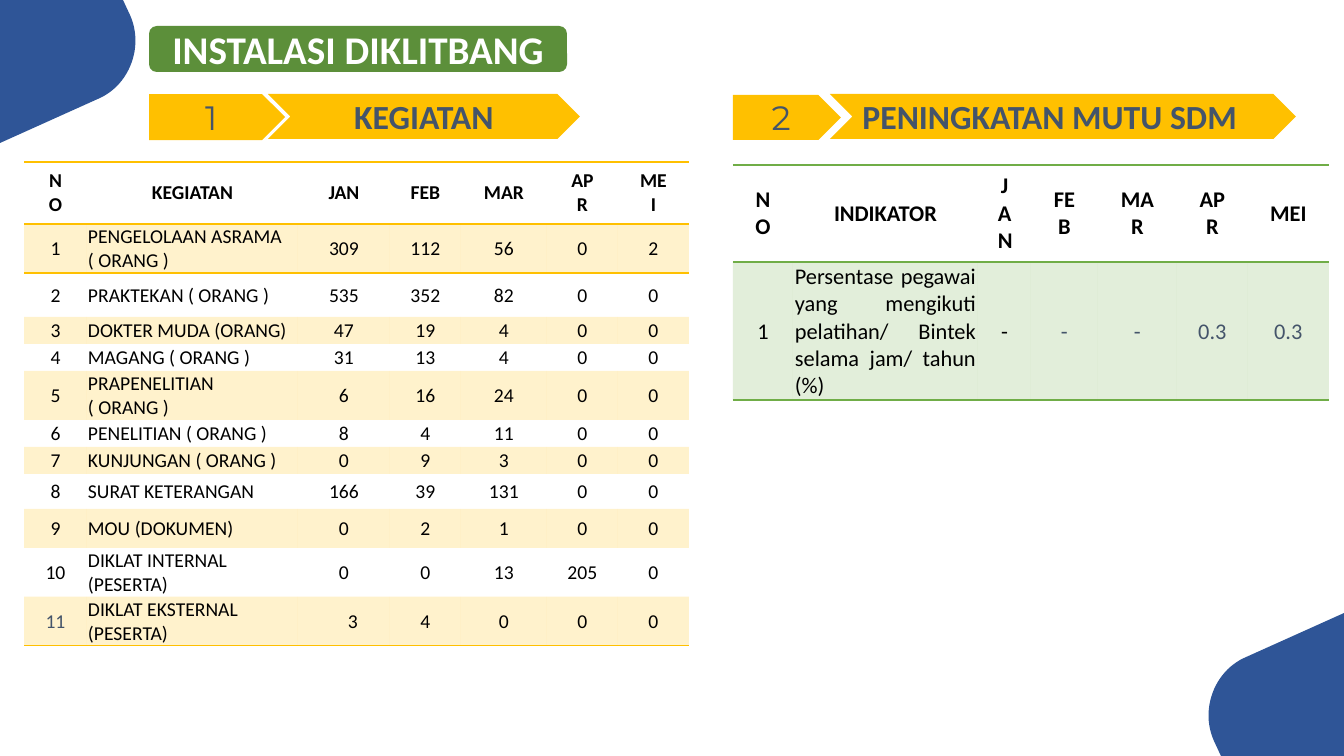
from lxml import etree
from pptx import Presentation
from pptx.dml.color import RGBColor
from pptx.enum.shapes import MSO_SHAPE
from pptx.enum.text import MSO_ANCHOR, MSO_AUTO_SIZE, PP_ALIGN
from pptx.oxml.ns import qn
from pptx.util import Pt

CENTER, LEFT, JUSTIFY = PP_ALIGN.CENTER, PP_ALIGN.LEFT, PP_ALIGN.JUSTIFY
MIDDLE = MSO_ANCHOR.MIDDLE
PENTAGON, CHEVRON = MSO_SHAPE.PENTAGON, MSO_SHAPE.CHEVRON
ROUNDED = MSO_SHAPE.ROUNDED_RECTANGLE

WIDTH, HEIGHT = 1344, 756
SCALE = 914400 / 100.8
BLUE, GREEN, GOLD, LEAF = "2F5597", "5C8F3A", "FFC000", "70AD47"
SLATE, BLACK, WHITE = "44546A", "000000", "FFFFFF"
PLAIN_STYLE = "{2D5ABB26-0587-4C30-8999-92F81FD0307C}"

TITLE = "INSTALASI DIKLITBANG"
TITLE_BOX = (149, 26, 418, 46)

# shape, box, text, font, bold, alignment
BANNERS = [
    (PENTAGON, (149, 94, 136, 46), "1", "Montserrat", False, CENTER),
    (CHEVRON, (268, 94, 312, 45), "KEGIATAN", "Calibri", True, CENTER),
    (PENTAGON, (733, 95, 108, 45), "2", "Montserrat", False, CENTER),
    (CHEVRON, (830, 94, 466, 45), "PENINGKATAN MUTU SDM", "Calibri", True, LEFT),
]

ACTIVITIES = {
    "at": (24, 162), "size": 14, "accent": GOLD, "label_align": LEFT, "inset": 1,
    "columns": [63, 211, 92, 71, 86, 71, 71],
    "heights": [62, 49, 44, 27, 27, 49, 27, 27, 35, 39, 49, 49],
    "slate_cells": {(11, 0)},
    "left_insets": {(11, 2): 19},
    "rows": [
        ("NO", "KEGIATAN", "JAN", "FEB", "MAR", "APR", "MEI"),
        (1, "PENGELOLAAN ASRAMA ( ORANG )", 309, 112, 56, 0, 2),
        (2, "PRAKTEKAN ( ORANG )", 535, 352, 82, 0, 0),
        (3, "DOKTER MUDA (ORANG)", 47, 19, 4, 0, 0),
        (4, "MAGANG ( ORANG )", 31, 13, 4, 0, 0),
        (5, "PRAPENELITIAN ( ORANG )", 6, 16, 24, 0, 0),
        (6, "PENELITIAN ( ORANG )", 8, 4, 11, 0, 0),
        (7, "KUNJUNGAN ( ORANG )", 0, 9, 3, 0, 0),
        (8, "SURAT KETERANGAN", 166, 39, 131, 0, 0),
        (9, "MOU (DOKUMEN)", 0, 2, 1, 0, 0),
        (10, "DIKLAT INTERNAL (PESERTA)", 0, 0, 13, 205, 0),
        (11, "DIKLAT EKSTERNAL (PESERTA)", 3, 4, 0, 0, 0),
    ],
}
STAFF_QUALITY = {
    "at": (733, 165), "size": 16, "accent": LEAF, "label_align": JUSTIFY, "inset": 2,
    "columns": [60, 185, 53, 67, 79, 71, 81],
    "heights": [97, 138],
    "slate_cells": {(1, column) for column in range(3, 7)},
    "left_insets": {},
    "rows": [
        ("NO", "INDIKATOR", "JAN", "FEB", "MAR", "APR", "MEI"),
        (1, "Persentase pegawai yang mengikuti pelatihan/ Bintek selama jam/ tahun (%)",
         "-", "-", "-", 0.3, 0.3),
    ],
}

CORNER_START = [(0, 0), (123, 0)]
CORNER_CURVE = [(130, 15), (144, 46), (130, 84), (100, 98)]
CORNER_END = [(0, 143)]


def px(length):
    return round(length * SCALE)


def color(value):
    return RGBColor.from_string(value)


def paint(shape, value):
    shape.shadow.inherit = False
    shape.fill.solid()
    shape.fill.fore_color.rgb = color(value)
    shape.line.fill.background()


def write(frame, text, align, font_color, **font_format):
    para = frame.paragraphs[0]
    para.alignment = align
    span = para.add_run()
    span.text = str(text)
    span.font.color.rgb = color(font_color)
    for name, value in font_format.items():
        setattr(span.font, name, value)


def curve_points(controls, steps=24):
    """Points along a cubic Bezier curve."""
    points = []
    for step in range(steps + 1):
        t = step / steps
        weights = ((1 - t) ** 3, 3 * t * (1 - t) ** 2, 3 * t * t * (1 - t), t ** 3)
        points.append(tuple(sum(w * point[axis] for w, point in zip(weights, controls))
                            for axis in (0, 1)))
    return points


def add_corner(page, points):
    first, *others = [(px(x), px(y)) for x, y in points]
    builder = page.shapes.build_freeform(*first)
    builder.add_line_segments(others, close=True)
    paint(builder.convert_to_shape(), BLUE)


def add_title(page):
    plate = page.shapes.add_shape(ROUNDED, *map(px, TITLE_BOX))
    paint(plate, GREEN)
    title = page.shapes.title
    title.element.addprevious(plate.element)
    for name, length in zip(("left", "top", "width", "height"), TITLE_BOX):
        setattr(title, name, px(length))
    frame = title.text_frame
    frame.auto_size = MSO_AUTO_SIZE.NONE
    frame.vertical_anchor = MIDDLE
    write(frame, TITLE, CENTER, WHITE, size=Pt(28), name="Calibri", bold=True)


def add_banner(page, kind, box, text, font, bold, align):
    banner = page.shapes.add_shape(kind, *map(px, box))
    paint(banner, GOLD)
    banner.text_frame.vertical_anchor = MIDDLE
    write(banner.text_frame, text, align, SLATE, size=Pt(24.1), name=font, bold=bold)


def tint(cell, value):
    """Fill a cell with the colour at 20% opacity."""
    cell.fill.solid()
    cell.fill.fore_color.rgb = color(value)
    properties = cell._tc.get_or_add_tcPr()
    shade = properties.find(qn("a:solidFill")).find(qn("a:srgbClr"))
    etree.SubElement(shade, qn("a:alpha"), val="20000")


def add_border(cell, side, value):
    border = etree.Element(qn("a:" + side), w=str(Pt(1)))
    fill = etree.SubElement(border, qn("a:solidFill"))
    etree.SubElement(fill, qn("a:srgbClr"), val=value)
    cell._tc.get_or_add_tcPr().insert(0, border)


def add_data_table(page, data):
    rows, columns, heights = data["rows"], data["columns"], data["heights"]
    box = (*data["at"], sum(columns), sum(heights))
    holder = page.shapes.add_table(len(rows), len(columns), *map(px, box))
    holder.element.find(".//" + qn("a:tableStyleId")).text = PLAIN_STYLE
    table = holder.table
    table.first_row = table.horz_banding = False
    for column, width in zip(table.columns, columns):
        column.width = px(width)
    for row, height in zip(table.rows, heights):
        row.height = px(height)

    for r, values in enumerate(rows):
        header = r == 0
        for c, value in enumerate(values):
            cell = table.cell(r, c)
            side = 20 if header else 2 if c == 0 else data["inset"]
            insets = {"left": data["left_insets"].get((r, c), side), "right": side,
                      "top": 7 if header else 1, "bottom": 7 if header else 0}
            for name, length in insets.items():
                setattr(cell, "margin_" + name, px(length))
            cell.vertical_anchor = MIDDLE
            align = data["label_align"] if c == 1 and not header else CENTER
            ink = SLATE if (r, c) in data["slate_cells"] else BLACK
            write(cell.text_frame, value, align, ink,
                  size=Pt(data["size"]), name="Calibri", bold=header)
            if r % 2:
                tint(cell, data["accent"])
            else:
                cell.fill.background()
            if header or r == len(rows) - 1:
                add_border(cell, "lnB", data["accent"])
            if r < 2:
                add_border(cell, "lnT", data["accent"])


def main():
    deck = Presentation()
    deck.slide_width, deck.slide_height = px(WIDTH), px(HEIGHT)
    page = deck.slides.add_slide(deck.slide_layouts[5])
    corner = CORNER_START + curve_points(CORNER_CURVE) + CORNER_END
    add_corner(page, [(WIDTH - x, HEIGHT - y) for x, y in corner])
    add_corner(page, corner)
    for data in (ACTIVITIES, STAFF_QUALITY):
        add_data_table(page, data)
    for banner in BANNERS:
        add_banner(page, *banner)
    add_title(page)
    deck.save("out.pptx")


if __name__ == "__main__":
    main()
